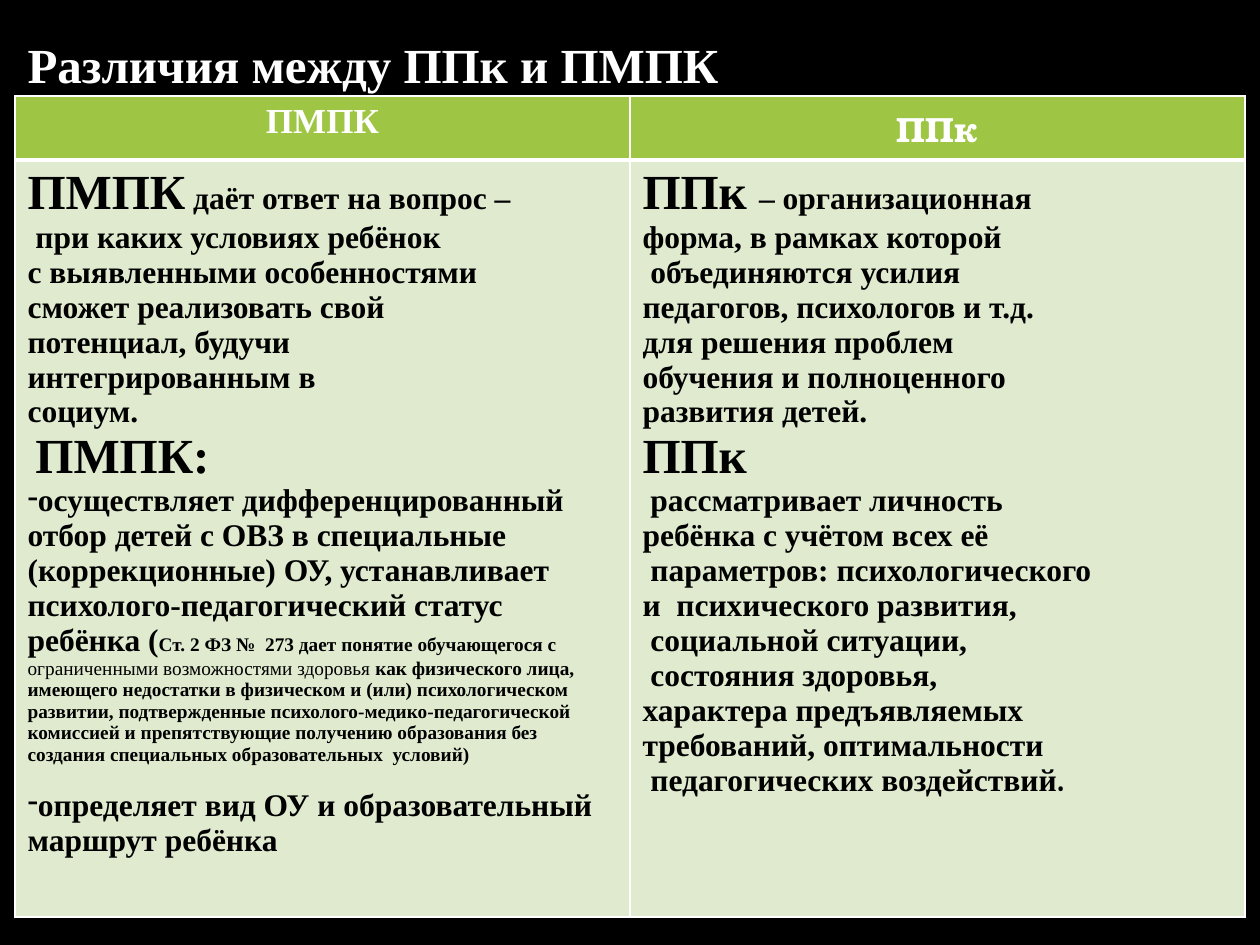
"""Build the slide comparing ПМПК and ППк in a two-column table."""
from lxml import etree
from pptx import Presentation
from pptx.dml.color import RGBColor
from pptx.enum.text import MSO_AUTO_SIZE, PP_ALIGN
from pptx.oxml.ns import qn
from pptx.util import Emu, Pt

LEFT, CENTER = PP_ALIGN.LEFT, PP_ALIGN.CENTER
NO_FIT = MSO_AUTO_SIZE.NONE
PX = 914400 // 126

SERIF = "Times New Roman"
THEME = {
    "background": "000000", "light": "FFFFFF", "dark": "000000",
    "header_fill": "9EC544", "body_fill": "DFEACF",
    "thin": 1, "thick": 3,
    "title": (28, True, SERIF, "light"),
    "header": (20, True, SERIF, "light"),
    "header_alt": (20, True, "TeX Gyre Bonum", "light"),
    "term": (28, True, SERIF, "dark"),
    "text": (18, True, SERIF, "dark"),
    "stop": (18, True, "Cambria", "dark"),
    "note": (11, True, SERIF, "dark"),
    "note_plain": (11, False, SERIF, "dark"),
}

TITLE = "Различия между ППк и ПМПК"
HEADERS = [("ПМПК", "header"), ("ППк", "header_alt")]
COMMISSION = [
    [("ПМПК", "term"), (" даёт ответ на вопрос –", "text")],
    " при каких условиях ребёнок",
    "с выявленными особенностями",
    "сможет реализовать свой",
    "потенциал, будучи",
    "интегрированным в",
    "социум.",
    [(" ", "text"), ("ПМПК:", "term")],
    {"bullet": "-", "before": 0, "text": "осуществляет дифференцированный"},
    "отбор детей с ОВЗ в специальные",
    [("(коррекционные) ОУ, устанавливает психолого-педагогический статус ребёнка (", "text"),
     ("Ст. 2 ФЗ №  273 дает понятие обучающегося с ", "note"),
     ("ограниченными возможностями здоровья ", "note_plain"),
     ("как физического лица, имеющего недостатки в физическом и (или) "
      "психологическом развитии, подтвержденные психолого-медико-педагогической "
      "комиссией и препятствующие получению образования без создания специальных "
      "образовательных  условий)", "note")],
    {"bullet": "-", "before": 13, "text": "определяет вид ОУ и образовательный маршрут ребёнка"},
]
COUNCIL = [
    [("ППк ", "term"), ("– организационная", "text")],
    "форма, в рамках которой",
    " объединяются усилия",
    "педагогов, психологов и т.д.",
    "для решения проблем",
    "обучения и полноценного",
    "развития детей.",
    [("ППк", "term")],
    " рассматривает личность",
    "ребёнка с учётом всех её",
    " параметров: психологического",
    "и  психического развития,",
    " социальной ситуации,",
    " состояния здоровья,",
    "характера предъявляемых",
    "требований, оптимальности",
    [(" педагогических воздействий", "text"), (".", "stop")],
]

TITLE_BOX = (15, 16, 1091, 929)
TABLE_BOX = (15, 96, 1230, 814)
ROW_HEIGHTS = (57, 757)


def px(*values):
    return [Emu(value * PX) for value in values]


def color(name):
    return RGBColor.from_string(THEME[name])


def add_run(paragraph, text, style):
    size, bold, face, ink = THEME[style]
    run = paragraph.add_run()
    run.text = text
    run.font.size, run.font.bold, run.font.name = Pt(size), bold, face
    run.font.color.rgb = color(ink)


def set_bullet(paragraph, character=None, margin=0):
    properties = paragraph._p.get_or_add_pPr()
    properties.set("marL", str(margin * PX))
    properties.set("indent", str(-margin * PX))
    if character:
        etree.SubElement(properties, qn("a:buChar")).set("char", character)
    else:
        etree.SubElement(properties, qn("a:buNone"))


def add_title(slide):
    slide.shapes.title.element.getparent().remove(slide.shapes.title.element)
    heading = slide.placeholders[1]
    heading.left, heading.top, heading.width, heading.height = px(*TITLE_BOX)
    heading.text_frame.auto_size = NO_FIT
    paragraph = heading.text_frame.paragraphs[0]
    paragraph.alignment = LEFT
    paragraph.line_spacing, paragraph.space_before = 1.2, Pt(10)
    set_bullet(paragraph, margin=38)
    add_run(paragraph, TITLE, "title")


def style_cell(cell, fill, top, bottom):
    properties = cell._tc.get_or_add_tcPr()
    thin = THEME["thin"]
    for side, width in (("L", thin), ("R", thin), ("T", top), ("B", bottom)):
        line = etree.SubElement(properties, qn(f"a:ln{side}"), w=str(Pt(width)))
        solid = etree.SubElement(line, qn("a:solidFill"))
        etree.SubElement(solid, qn("a:srgbClr"), val=THEME["light"])
    cell.fill.solid()
    cell.fill.fore_color.rgb = color(fill)


def write_body(cell, items):
    frame = cell.text_frame
    for index, item in enumerate(items):
        paragraph = frame.add_paragraph() if index else frame.paragraphs[0]
        if isinstance(item, dict):
            paragraph.space_before = Pt(item["before"])
            set_bullet(paragraph, item["bullet"])
            item = item["text"]
        runs = [(item, "text")] if isinstance(item, str) else item
        for text, style in runs:
            add_run(paragraph, text, style)


def add_comparison(slide):
    table = slide.shapes.add_table(2, 2, *px(*TABLE_BOX)).table
    for row, height in zip(table.rows, px(*ROW_HEIGHTS)):
        row.height = height
    thin, thick = THEME["thin"], THEME["thick"]
    for column, (header, items) in enumerate(zip(HEADERS, (COMMISSION, COUNCIL))):
        header_cell, body_cell = table.cell(0, column), table.cell(1, column)
        style_cell(header_cell, "header_fill", thin, thick)
        style_cell(body_cell, "body_fill", thick, thin)
        paragraph = header_cell.text_frame.paragraphs[0]
        paragraph.alignment = CENTER
        add_run(paragraph, *header)
        write_body(body_cell, items)


def main():
    presentation = Presentation()
    presentation.slide_width, presentation.slide_height = px(1260, 945)
    slide = presentation.slides.add_slide(presentation.slide_layouts[1])
    slide.background.fill.solid()
    slide.background.fill.fore_color.rgb = color("background")
    add_title(slide)
    add_comparison(slide)
    presentation.save("out.pptx")


if __name__ == "__main__":
    main()
